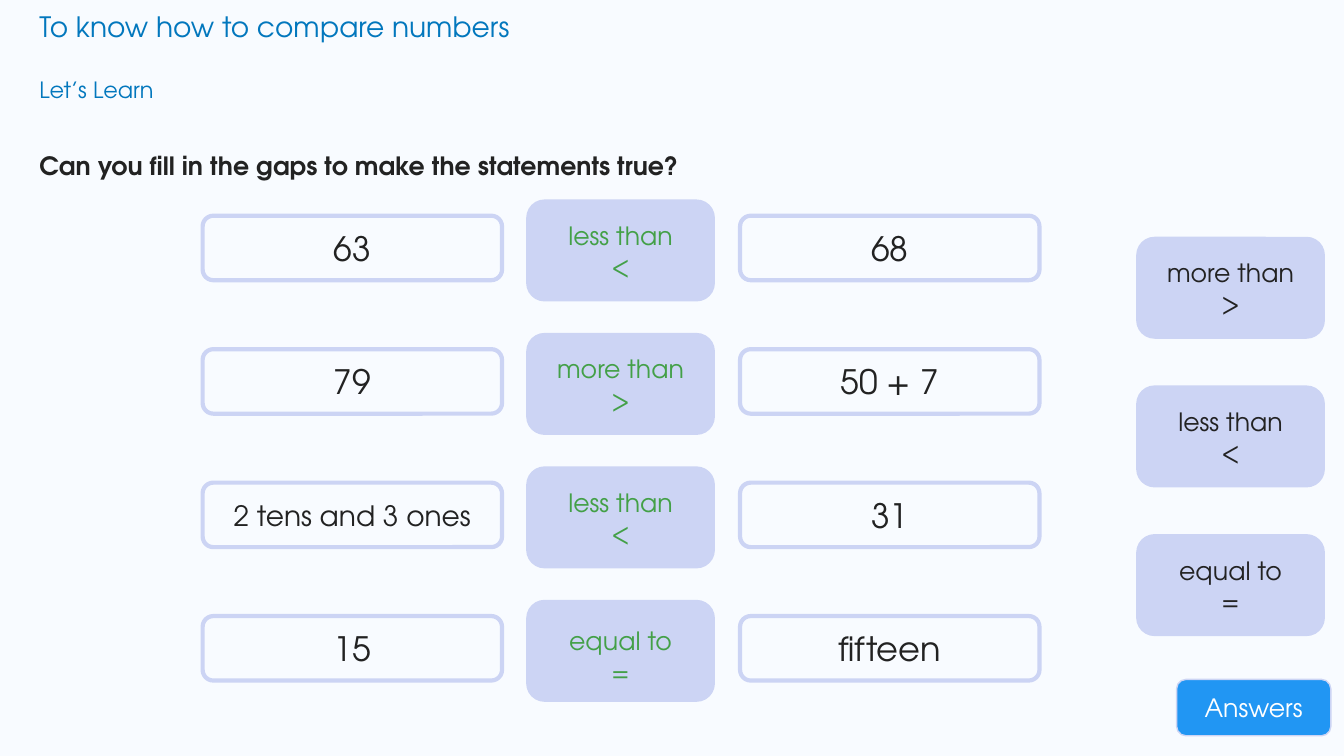
from dataclasses import dataclass

from lxml import etree
from pptx import Presentation
from pptx.dml.color import RGBColor
from pptx.enum import shapes, text
from pptx.oxml import ns
from pptx.util import Inches, Pt


@dataclass(frozen=True)
class Theme:
    """Hold the colours, type sizes and font."""
    font: str = "TeX Gyre Adventor"
    back: str = "F8FBFF"
    head: str = "0277BD"
    ink: str = "222222"
    card: str = "CCD4F4"
    answer: str = "43A047"
    button: str = "2196F3"
    white: str = "FFFFFF"
    big: int = 24
    title: int = 20
    label: int = 18
    small: int = 16


THEME = Theme()
SIGNS = {"more than": ">", "less than": "<", "equal to": "="}
ROWS = [
    ("63", "less than", "68", THEME.big, 0),
    ("79", "more than", "50 + 7", THEME.big, 0),
    ("2 tens and 3 ones", "less than", "31", THEME.title, 0),
    ("15", "equal to", "fifteen", THEME.big, 0.05),
]
TOP, STEP = 2, 1.324
SIGN_W, SIGN_H = 1.83, 0.97
BOX_W, BOX_H = 2.97, 0.64


def rgb(code):
    """Turn a hex code into a colour."""
    return RGBColor.from_string(code)


def write(frame, lines, size, color, align, bold=False):
    """Write each line as a paragraph with one run."""
    frame.word_wrap = True
    frame.auto_size = text.MSO_AUTO_SIZE.NONE
    for i, line in enumerate(lines):
        para = frame.paragraphs[0] if i == 0 else frame.add_paragraph()
        para.alignment = align
        run = para.add_run()
        run.text = line
        font = run.font
        font.name, font.size, font.bold = THEME.font, Pt(size), bold
        font.color.rgb = rgb(color)


def place(holder, area, line, size, color, bold=False, space=1):
    """Move a placeholder and write one plain line in it."""
    holder.left, holder.top, holder.width, holder.height = map(Inches, area)
    frame = holder.text_frame
    frame.vertical_anchor = text.MSO_ANCHOR.TOP
    para = frame.paragraphs[0]
    props = para._p.get_or_add_pPr()
    props.set("marL", "0")
    props.set("indent", "0")
    etree.SubElement(props, ns.qn("a:buNone"))
    para.space_before = Pt(0)
    para.line_spacing = space
    write(frame, [line], size, color, text.PP_ALIGN.LEFT, bold)


def box(slide, area, lines=(), size=THEME.label, color=THEME.ink,
        fill=None, line=None, width=3):
    """Draw a rounded box with centred lines of text."""
    shape = slide.shapes.add_shape(
        shapes.MSO_SHAPE.ROUNDED_RECTANGLE, *map(Inches, area))
    shape.shadow.inherit = False
    if fill:
        shape.fill.solid()
        shape.fill.fore_color.rgb = rgb(fill)
    else:
        shape.fill.background()
    if line:
        shape.line.color.rgb = rgb(line)
        shape.line.width = Pt(width)
    else:
        shape.line.fill.background()
    shape.text_frame.vertical_anchor = text.MSO_ANCHOR.MIDDLE
    write(shape.text_frame, lines, size, color, text.PP_ALIGN.CENTER)


def heads(slide):
    """Fill the title and the two lines under it."""
    title, topic, task = slide.placeholders
    place(title, (0.29, 0.04, 12.34, 0.44), "To know how to compare numbers",
          THEME.title, THEME.head)
    place(topic, (0.29, 0.71, 2.97, 0.46), "Let’s Learn",
          THEME.small, THEME.head)
    place(task, (0.29, 1.29, 12.84, 0.64),
          "Can you fill in the gaps to make the statements true?",
          THEME.label, THEME.ink, True, 1.5)


def rows(slide):
    """Draw each statement with its answer in the gap."""
    for i, (left, word, right, size, drop) in enumerate(ROWS):
        top = TOP + i * STEP
        box(slide, (5.24, top, SIGN_W, SIGN_H),
            fill=THEME.card, line=THEME.card)
        box(slide, (5.24, top + drop, SIGN_W, SIGN_H), (word, SIGNS[word]),
            color=THEME.answer)
        for x, label, pt in ((2.01, left, size), (7.34, right, THEME.big)):
            box(slide, (x, top + 0.14, BOX_W, BOX_H), [label], pt,
                line=THEME.card)


def choices(slide):
    """Draw the column of signs to choose from."""
    for i, pair in enumerate(SIGNS.items()):
        box(slide, (11.29, 2.37 + i * 1.475, SIGN_W, SIGN_H), pair,
            fill=THEME.card, line=THEME.card)


def main():
    """Build and save the slide."""
    deck = Presentation()
    deck.slide_width, deck.slide_height = Inches(13.33), Inches(7.5)
    slide = deck.slides.add_slide(deck.slide_layouts.get_by_name("Two Content"))
    slide.background.fill.solid()
    slide.background.fill.fore_color.rgb = rgb(THEME.back)
    heads(slide)
    box(slide, (11.67, 6.74, 1.53, 0.56), ["Answers"], color=THEME.white,
        fill=THEME.button, line=THEME.card, width=1)
    choices(slide)
    rows(slide)
    deck.save("out.pptx")


if __name__ == "__main__":
    main()
